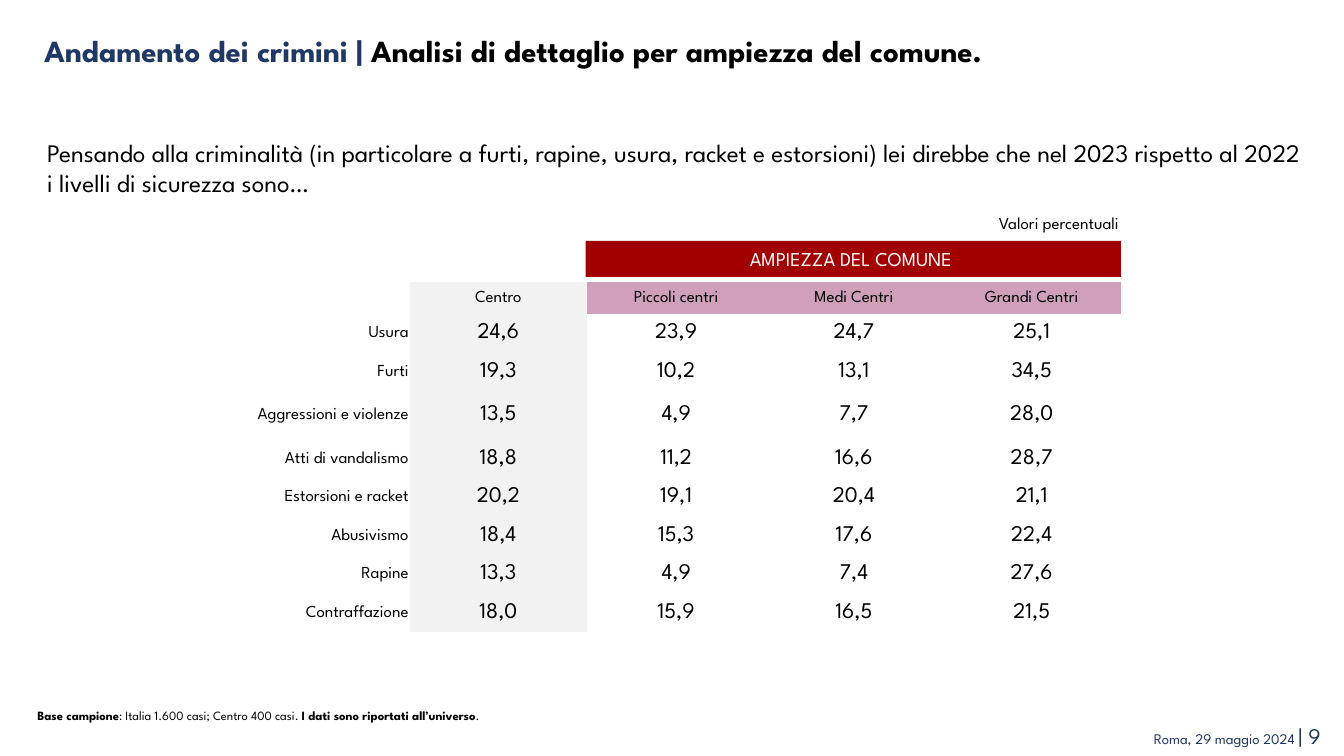
import pptx
import pptx.util
import pptx.dml.color
import pptx.enum.shapes
import pptx.enum.text

Cm = pptx.util.Cm
Pt = pptx.util.Pt
ALIGN = pptx.enum.text.PP_ALIGN
ANCHOR = pptx.enum.text.MSO_ANCHOR
COLORS = {"navy": "203864", "black": "000000", "white": "FFFFFF",
          "red": "A20000", "pink": "D0A0BA", "gray": "F2F2F2"}
PLAIN = "{2D5ABB26-0587-4C30-8999-92F81FD0307C}"
HEADS = ["", "Centro", "Piccoli centri", "Medi Centri", "Grandi Centri"]
CRIMES = [
    ["Usura", "24,6", "23,9", "24,7", "25,1"],
    ["Furti", "19,3", "10,2", "13,1", "34,5"],
    ["Aggressioni e violenze", "13,5", "4,9", "7,7", "28,0"],
    ["Atti di vandalismo", "18,8", "11,2", "16,6", "28,7"],
    ["Estorsioni e racket", "20,2", "19,1", "20,4", "21,1"],
    ["Abusivismo", "18,4", "15,3", "17,6", "22,4"],
    ["Rapine", "13,3", "4,9", "7,4", "27,6"],
    ["Contraffazione", "18,0", "15,9", "16,5", "21,5"],
]


class Deck:
    """Holds the style and the current slide."""

    def __init__(self, face):
        self.face = face
        self.show = pptx.Presentation()
        self.show.slide_width = Cm(33.87)
        self.show.slide_height = Cm(19.05)
        self.slide = self.show.slides.add_slide(self.show.slide_layouts[5])

    def color(self, name):
        return pptx.dml.color.RGBColor.from_string(COLORS[name])

    def paint(self, item, name):
        item.fill.solid()
        item.fill.fore_color.rgb = self.color(name)

    def words(self, frame, parts, size, align=ALIGN.LEFT, color="black"):
        para = frame.paragraphs[0]
        para.alignment = align
        para.font.name = self.face
        para.font.size = Pt(size)
        para.font.color.rgb = self.color(color)
        for text, style in parts:
            run = para.add_run()
            run.text = text
            if "bold" in style:
                run.font.bold = style["bold"]
            if "size" in style:
                run.font.size = Pt(style["size"])
            if "color" in style:
                run.font.color.rgb = self.color(style["color"])
        return para

    def title(self, box, parts, size):
        shape = self.slide.shapes.title
        shape.left, shape.top, shape.width, shape.height = map(Cm, box)
        frame = shape.text_frame
        frame.auto_size = pptx.enum.text.MSO_AUTO_SIZE.NONE
        frame.vertical_anchor = ANCHOR.TOP
        frame.margin_left = frame.margin_right = Cm(0.18)
        frame.margin_top = frame.margin_bottom = Cm(0.1)
        self.words(frame, parts, size).font.bold = True

    def text(self, box, parts, size, align=ALIGN.LEFT, color="black"):
        frame = self.slide.shapes.add_textbox(*map(Cm, box)).text_frame
        frame.word_wrap = True
        return self.words(frame, parts, size, align, color)

    def banner(self, box, text, size):
        kind = pptx.enum.shapes.MSO_SHAPE.RECTANGLE
        shape = self.slide.shapes.add_shape(kind, *map(Cm, box))
        shape.shadow.inherit = False
        shape.line.fill.background()
        self.paint(shape, "red")
        shape.text_frame.vertical_anchor = ANCHOR.MIDDLE
        self.words(shape.text_frame, [(text, {})], size, ALIGN.CENTER, "white")

    def cell(self, cell, text, row, col):
        cell.vertical_anchor = ANCHOR.MIDDLE
        label = row == 0 or col == 0
        side = Cm(0.02 if label else 0)
        cell.margin_left = cell.margin_right = cell.margin_top = side
        cell.margin_bottom = 0
        if col == 1:
            self.paint(cell, "gray")
        elif row == 0:
            self.paint(cell, "pink" if col else "white")
        else:
            cell.fill.background()
        align = ALIGN.CENTER if col else ALIGN.RIGHT
        parts = [(text, {})] if text else []
        self.words(cell.text_frame, parts, 12 if label else 16, align)

    def table(self, box, rows, wide, tall):
        frame = self.slide.shapes.add_table(len(rows), len(wide), *map(Cm, box))
        frame.element.find(".//{*}tableStyleId").text = PLAIN
        grid = frame.table
        grid.first_row = grid.horz_banding = False
        for col, width in zip(grid.columns, wide):
            col.width = Cm(width)
        for row, height in zip(grid.rows, tall):
            row.height = Cm(height)
        for r, row in enumerate(rows):
            for c, text in enumerate(row):
                self.cell(grid.cell(r, c), text, r, c)


def main():
    deck = Deck("League Spartan")
    deck.text((15.93, 18.06, 17.6, 0.94),
              [("Roma, 29 maggio 2024 ", {}), ("| 9", {"size": 16})],
              10.5, ALIGN.RIGHT, "navy")
    deck.text((0.94, 3.33, 32.18, 1.8),
              [("Pensando alla criminalità (in particolare a furti, rapine, "
                "usura, racket e estorsioni) lei direbbe che nel 2023 rispetto "
                "al 2022 i livelli di sicurezza sono…", {})], 18)
    deck.title((0.94, 0.69, 32.79, 1.14),
               [("Andamento dei crimini |", {"color": "navy"}),
                (" Analisi di dettaglio per ampiezza del comune.", {})], 22)
    deck.banner((14.76, 6.07, 13.49, 0.91), "AMPIEZZA DEL COMUNE ", 14)
    tall = [0.81] + [1.22 if row[0] == "Aggressioni e violenze" else 0.97
                     for row in CRIMES]
    wide = [8.97] + [4.48] * 4
    deck.table((1.35, 7.11, sum(wide), sum(tall)), [HEADS] + CRIMES, wide, tall)
    deck.text((22.99, 5.23, 5.46, 0.76),
              [("Valori percentuali", {})], 12, ALIGN.RIGHT)
    note = deck.text((0.69, 17.68, 31.85, 0.64),
                     [("Base campione", {"bold": True}),
                      (": Italia 1.600 casi; Centro 400 casi. ", {}),
                      ("I dati sono riportati all’universo", {"bold": True}),
                      (".", {})], 9, ALIGN.JUSTIFY)
    note.line_spacing = 1.1
    deck.show.save("out.pptx")


if __name__ == "__main__":
    main()
